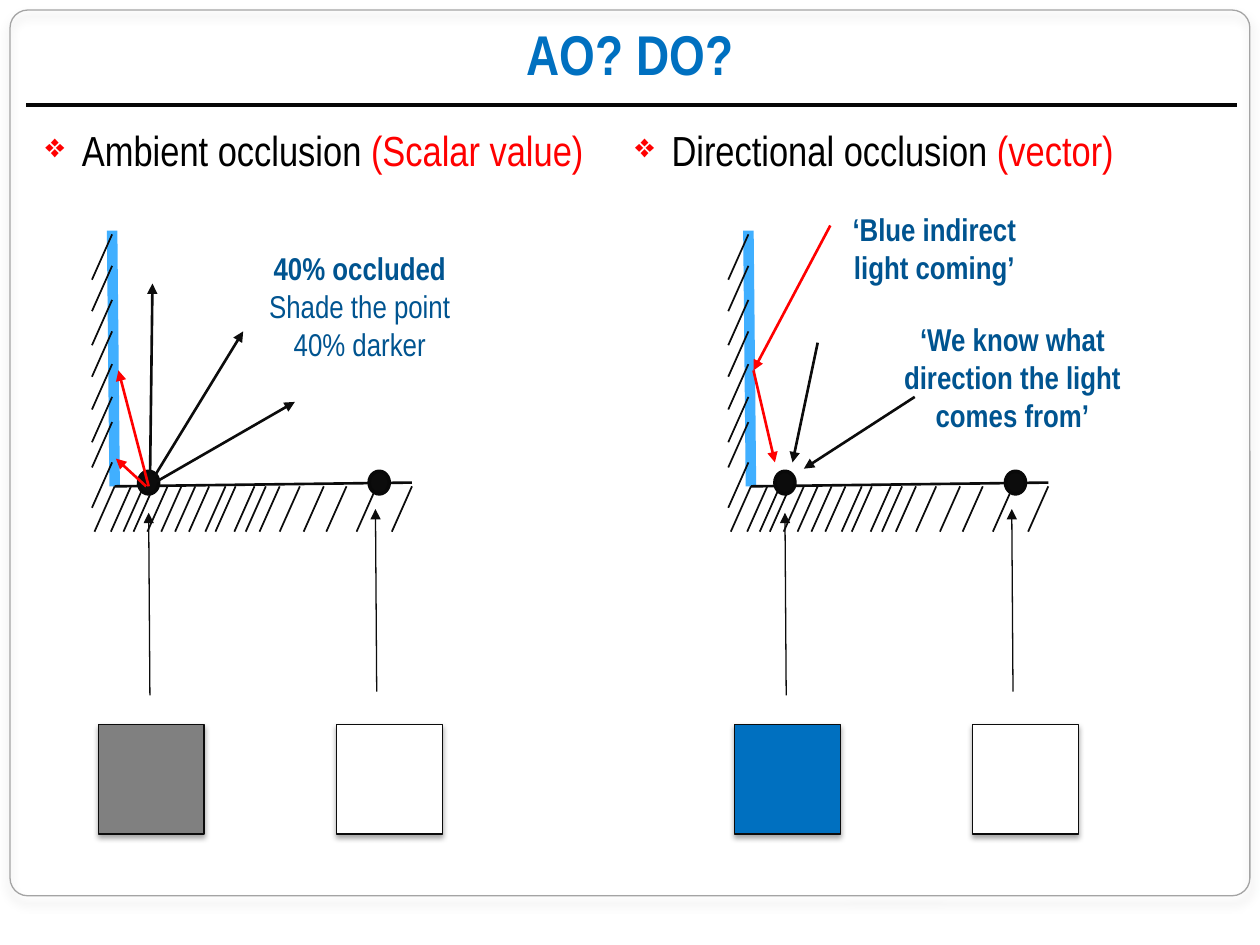
from lxml import etree
from pptx import Presentation
from pptx.dml.color import RGBColor
from pptx.enum.shapes import MSO_CONNECTOR, MSO_SHAPE
from pptx.enum.text import MSO_ANCHOR, MSO_AUTO_SIZE, PP_ALIGN
from pptx.oxml.ns import qn
from pptx.util import Inches, Pt

STRAIGHT = MSO_CONNECTOR.STRAIGHT
RECTANGLE, ROUNDED, OVAL = MSO_SHAPE.RECTANGLE, MSO_SHAPE.ROUNDED_RECTANGLE, MSO_SHAPE.OVAL
CENTER, LEFT = PP_ALIGN.CENTER, PP_ALIGN.LEFT
MIDDLE = MSO_ANCHOR.MIDDLE
GROW = MSO_AUTO_SIZE.SHAPE_TO_FIT_TEXT

FONT = "Arial Narrow"
INK, RED, BLUE, NAVY, WALL = "0C0C0C", "FF0000", "0070C0", "005490", "40AFFF"

# The slide is a grid of 100 columns by 75 rows of square cells
SLIDE_WIDTH, SLIDE_HEIGHT = Inches(10), Inches(7.5)
CELL = SLIDE_WIDTH / 100

# Hatching of the wall (rows) and of the floor (columns) inside a scene
WALL_ROWS = (0.6, 3.1, 5.8, 8.3, 10.9, 13.5, 15.5, 18.7)
FLOOR_COLUMNS = (2.1, 3.4, 4.4, 5.2, 6.3, 7.4, 8.5, 9.6, 10.9, 11.7,
                 13.2, 14.1, 15.2, 16.8, 18.7, 20.5, 22.9, 25.7)
HATCH_WIDTH, HATCH_HEIGHT = 1.6, 3.6
POINT_SPACING = 18.3
SWATCH_SPACING = 18.9


def cells(*values):
    return [round(value * CELL) for value in values]


def color(hex_text):
    return RGBColor.from_string(hex_text)


def add_line(slide, start, end, line_color, width, origin=(0, 0), arrow=False):
    x, y = origin
    line = slide.shapes.add_connector(
        STRAIGHT, *cells(x + start[0], y + start[1], x + end[0], y + end[1]))
    line.line.color.rgb = color(line_color)
    line.line.width = Pt(width)
    if arrow:
        etree.SubElement(line.line._get_or_add_ln(), qn("a:tailEnd"), type="triangle")
    etree.SubElement(line._element.spPr, qn("a:effectLst"))


def add_shadow(shape, alpha, blur, distance):
    effects = shape._element.spPr.find(qn("a:effectLst"))
    shadow = etree.SubElement(effects, qn("a:outerShdw"), blurRad=str(Pt(blur)),
                              dist=str(Pt(distance)), dir="5400000", rotWithShape="0")
    shade = etree.SubElement(shadow, qn("a:srgbClr"), val="000000")
    etree.SubElement(shade, qn("a:alpha"), val=str(alpha * 1000))


def add_outline(slide, kind, box, fill, line_color, width):
    shape = slide.shapes.add_shape(kind, *cells(*box))
    shape.shadow.inherit = False
    if fill:
        shape.fill.solid()
        shape.fill.fore_color.rgb = color(fill)
    else:
        shape.fill.background()
    shape.line.color.rgb = color(line_color)
    shape.line.width = Pt(width)
    return shape


def add_run(paragraph, text, size, text_color, bold=False):
    run = paragraph.add_run()
    run.text = text
    run.font.name = FONT
    run.font.size = Pt(size)
    run.font.bold = bold
    run.font.color.rgb = color(text_color)


def add_frame(slide):
    """Rule under the title and rounded border around the slide."""
    add_line(slide, (2.1, 8.3), (98.2, 8.3), "060606", 2.25)
    border = add_outline(slide, ROUNDED, (0.8, 0.8, 98.4, 70.3), None, "A4A4A4", 0.75)
    border.adjustments[0] = 0.02
    add_shadow(border, 25, 6, 4)


def set_title(slide, text, box):
    title = slide.shapes.title
    title.left, title.top, title.width, title.height = cells(*box)
    title.text_frame.vertical_anchor = MIDDLE
    paragraph = title.text_frame.paragraphs[0]
    paragraph.alignment = CENTER
    add_run(paragraph, text, 32, BLUE, True)


def add_heading(slide, box, text, remark):
    """Bulleted column heading with a red remark."""
    frame = slide.shapes.add_textbox(*cells(*box)).text_frame
    frame.word_wrap = True
    frame.margin_left, frame.margin_top = Inches(0.2), Inches(0.13)
    paragraph = frame.paragraphs[0]
    paragraph.alignment = LEFT
    properties = paragraph._p.get_or_add_pPr()
    properties.set("marL", str(Inches(0.29)))
    properties.set("indent", str(-Inches(0.29)))
    bullet_color = etree.SubElement(properties, qn("a:buClr"))
    etree.SubElement(bullet_color, qn("a:srgbClr"), val=RED)
    etree.SubElement(properties, qn("a:buSzPct"), val="80000")
    etree.SubElement(properties, qn("a:buChar"), char="❖")
    add_run(paragraph, text, 24, "000000")
    add_run(paragraph, remark, 24, RED)


def add_label(slide, origin, box, *lines):
    """Centred caption; each line is a (text, bold) pair."""
    left, top, width, height = box
    shape = slide.shapes.add_textbox(
        *cells(origin[0] + left, origin[1] + top, width, height))
    frame = shape.text_frame
    frame.word_wrap = True
    frame.auto_size = GROW
    for index, (text, bold) in enumerate(lines):
        paragraph = frame.add_paragraph() if index else frame.paragraphs[0]
        paragraph.alignment = CENTER
        add_run(paragraph, text, 18, NAVY, bold)


def add_scene(slide, origin, swatch_colors, rays):
    """Hatched corner with two shaded points, their swatches and light rays."""
    x, y = origin
    corner = (2.1, 20.6)
    add_line(slide, (1.9, 0.3), corner, WALL, 6, origin)
    add_line(slide, (25.7, 20.3), corner, INK, 1.5, origin)

    # Hatching
    starts = [(1.9, row) for row in WALL_ROWS]
    starts += [(column, corner[1]) for column in FLOOR_COLUMNS]
    for column, row in starts:
        add_line(slide, (column, row), (column - HATCH_WIDTH, row + HATCH_HEIGHT),
                 INK, 1, origin)

    # Points, pointers and swatches
    for index, swatch_color in enumerate(swatch_colors):
        add_outline(slide, OVAL, (x + 4 + index * POINT_SPACING, y + 19.4, 1.6, 1.8),
                    INK, "090909", 2)
        pointer, lift = 4.9 + index * 18, index * 0.3
        add_line(slide, (pointer, 37.2 - lift), (pointer - 0.1, 22.7 - lift),
                 INK, 0.75, origin, arrow=True)
        swatch = add_outline(
            slide, RECTANGLE, (x + 0.8 + index * SWATCH_SPACING, y + 39.5, 8.4, 8.7),
            swatch_color, INK, 0.75)
        add_shadow(swatch, 35, 3.1, 1.8)

    for start, end, ray_color in rays:
        add_line(slide, start, end, ray_color, 1.5, origin, arrow=True)


def main():
    presentation = Presentation()
    presentation.slide_width, presentation.slide_height = SLIDE_WIDTH, SLIDE_HEIGHT
    slide = presentation.slides.add_slide(presentation.slide_layouts[5])
    add_frame(slide)
    set_title(slide, "AO? DO?", (0, 0, 100, 8.4))

    # Ambient occlusion
    ambient = (7, 18)
    add_heading(slide, (1.6, 8.6, 46.2, 61.7), "Ambient occlusion ", "(Scalar value)")
    add_scene(slide, ambient, ("808080", "FFFFFF"), (
        ((4.6, 20.7), (16.4, 13.9), INK),
        ((4.9, 20.4), (12.3, 8.3), INK),
        ((4.9, 20.7), (5.1, 4.5), INK),
        ((4.6, 20.6), (2.2, 18.4), RED),
        ((4.8, 20.6), (2.4, 11.4), RED)))
    add_label(slide, ambient, (11.7, 1.3, 19.7, 10.1),
              ("40% occluded", True), ("Shade the point 40% darker", False))

    # Directional occlusion
    directional = (57.5, 18)
    add_heading(slide, (48.4, 8.6, 52, 61.7), "Directional occlusion ", "(vector)")
    add_scene(slide, directional, (BLUE, "FFFFFF"), (
        ((15.1, 13.5), (6.3, 19.2), INK),
        ((7.4, 9.2), (5.4, 18.7), INK),
        ((2.3, 11.4), (4, 18.7), RED),
        ((8.4, -0.1), (2.3, 11.4), RED)))
    add_label(slide, directional, (13.1, 6.9, 19.5, 10.1),
              ("‘We know what direction the light comes from’", True))
    add_label(slide, directional, (6.9, -1.8, 19.5, 7.1),
              ("‘Blue indirect light coming’", True))

    presentation.save("out.pptx")


if __name__ == "__main__":
    main()
